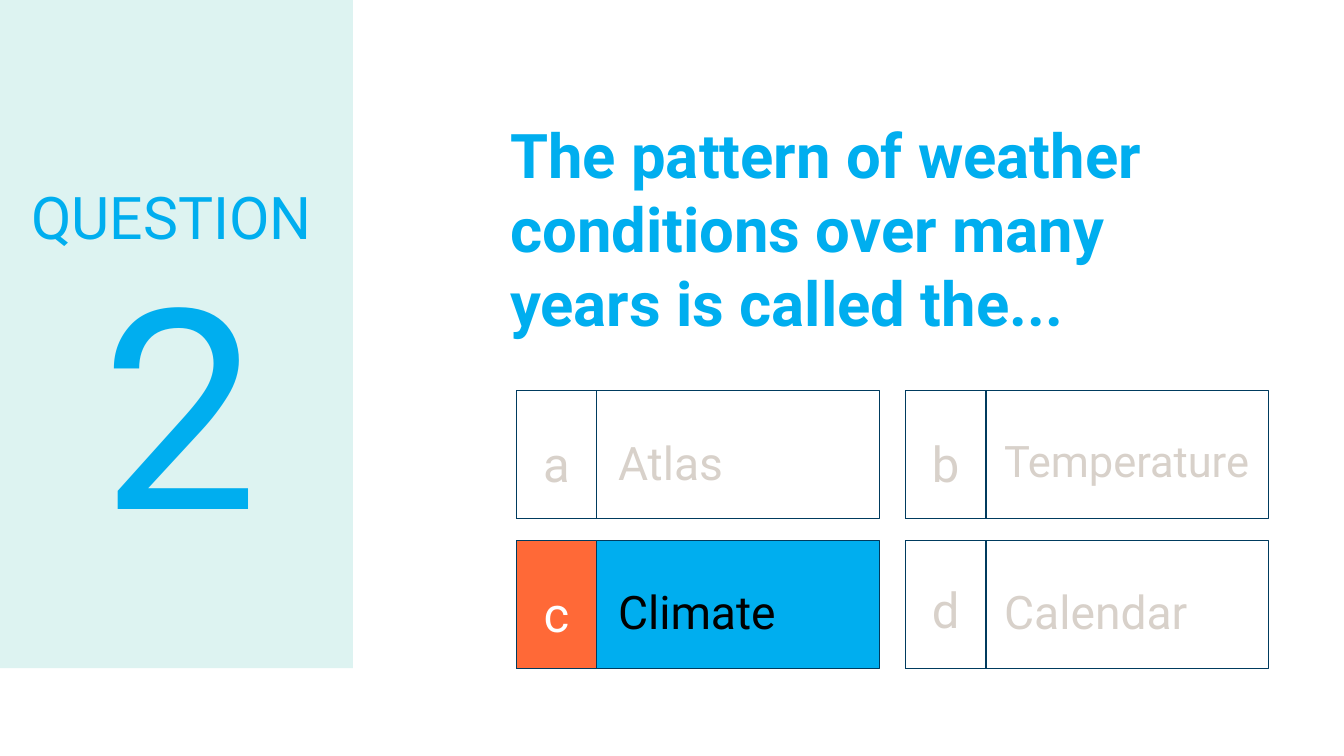
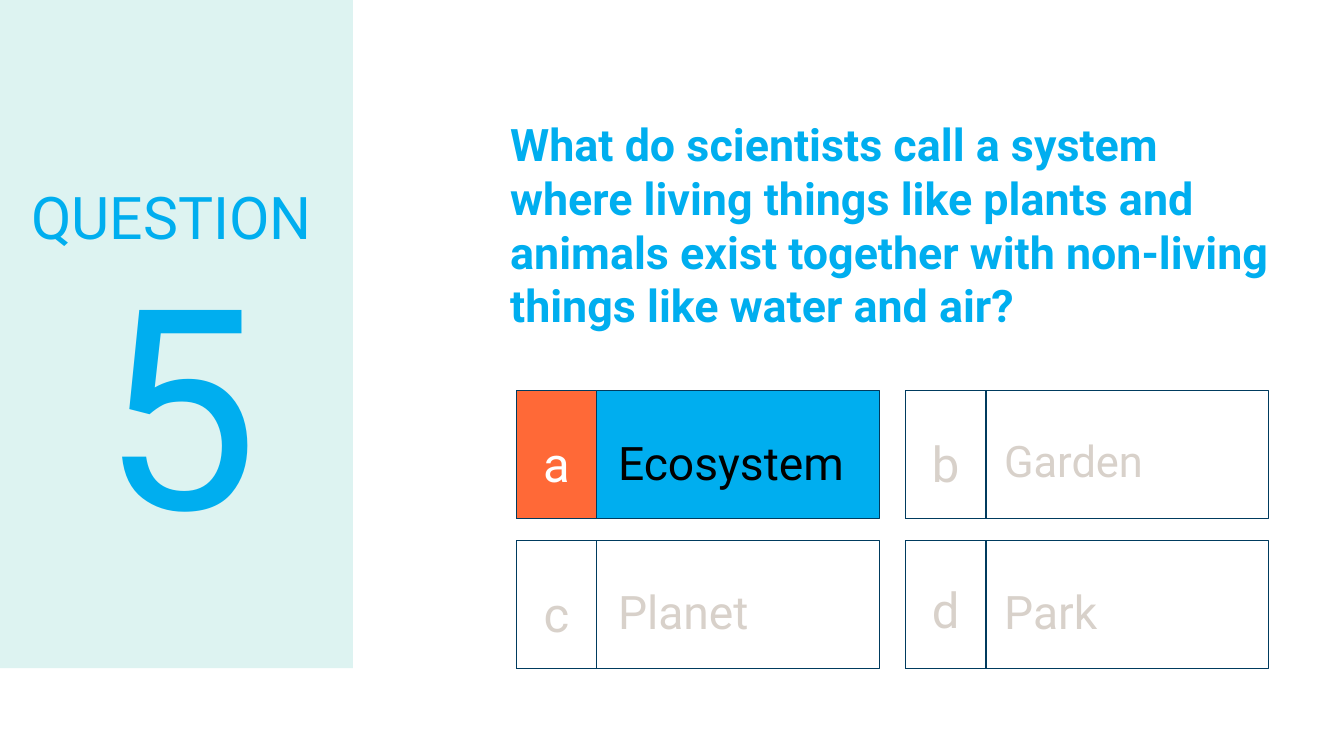
from pptx import Presentation
from pptx.dml.color import RGBColor
from pptx.enum.shapes import MSO_SHAPE
from pptx.enum.text import MSO_ANCHOR, PP_ALIGN
from pptx.util import Inches, Pt

# Shared style
FONT = "Roboto"
BLUE = RGBColor(0x00, 0xAE, 0xEF)
NAVY = RGBColor(0x00, 0x3B, 0x5E)
ORANGE = RGBColor(0xFF, 0x69, 0x37)
MINT = RGBColor(0xDD, 0xF3, 0xF1)
GREY = RGBColor(0xD8, 0xD1, 0xCA)
BLACK = RGBColor(0x00, 0x00, 0x00)
WHITE = RGBColor(0xFF, 0xFF, 0xFF)

# Answer grid: cell size, and the step from one cell to the next
CELL_WIDTH, CELL_HEIGHT, KEY_WIDTH = 3.6, 1.27, 0.8
COLUMN_STEP, ROW_STEP = 3.86, 1.49

# For each letter: text indent, answer size, drop of the letter, drop of the answer
OPTION_STYLES = {
    "a": (1.01, 33, 0.34, 0.36),
    "b": (0.98, 31, 0.34, 0.36),
    "c": (1.01, 33, 0.34, 0.34),
    "d": (0.98, 33, 0.30, 0.34),
}

# Question number, text, text size, text width, answers, correct letter
QUESTIONS = [
    ("2", "The pattern of weather conditions over many years is called the...",
     44, 7.6, ["Atlas", "Temperature", "Climate", "Calendar"], "c"),
    ("5", "What do scientists call a system where living things like plants and "
     "animals exist together with non-living things like water and air?",
     32, 7.82, ["Ecosystem", "Garden", "Planet", "Park"], "a"),
]


def write(shape, text, size, color, insets, bold=False, align=PP_ALIGN.LEFT,
          anchor=MSO_ANCHOR.TOP, spacing=1.0):
    """Put one styled paragraph in a shape; insets are left, top, right, bottom."""
    frame = shape.text_frame
    frame.word_wrap = True
    frame.vertical_anchor = anchor
    (frame.margin_left, frame.margin_top,
     frame.margin_right, frame.margin_bottom) = map(Inches, insets)
    para = frame.paragraphs[0]
    para.alignment = align
    para.line_spacing = spacing
    span = para.add_run()
    span.text = text
    span.font.name = FONT
    span.font.size = Pt(size)
    span.font.bold = bold
    span.font.color.rgb = color


def add_text(page, box, *args, **style):
    write(page.shapes.add_textbox(*map(Inches, box)), *args, **style)


def add_rectangle(page, box, fill=None, line=None):
    shape = page.shapes.add_shape(MSO_SHAPE.RECTANGLE, *map(Inches, box))
    shape.shadow.inherit = False
    if fill is None:
        shape.fill.background()
    else:
        shape.fill.solid()
        shape.fill.fore_color.rgb = fill
    if line is None:
        shape.line.fill.background()
    else:
        shape.line.color.rgb = line
        shape.line.width = Pt(0.75)
    return shape


def add_number_panel(page, box, number):
    """Tinted side panel with the word QUESTION above a large number."""
    left, top, _, _ = box
    add_rectangle(page, box, MINT)
    style = dict(insets=[0.05] * 4, anchor=MSO_ANCHOR.MIDDLE, spacing=0.9)
    add_text(page, (left + 0.26, top + 1.68, 3.34, 1.01), "QUESTION", 42, BLUE, **style)
    add_text(page, (left + 0.26, top + 2.59, 3.05, 3.12), number, 200, BLUE,
             align=PP_ALIGN.CENTER, **style)


def add_option(page, left, top, letter, answer, correct):
    """One answer: a wide cell with a letter key over its left end."""
    indent, size, letter_drop, answer_drop = OPTION_STYLES[letter]
    cell = add_rectangle(page, (left, top, CELL_WIDTH, CELL_HEIGHT),
                         BLUE if correct else None, NAVY)
    write(cell, answer, size, BLACK if correct else GREY,
          (indent, answer_drop, 0, 0), spacing=1.15)
    key = add_rectangle(page, (left, top, KEY_WIDTH, CELL_HEIGHT),
                        ORANGE if correct else None, NAVY)
    write(key, letter, 35, WHITE if correct else GREY,
          (0.1, letter_drop, 0.1, 0), align=PP_ALIGN.CENTER, spacing=1.15)


def add_options(page, left, top, answers, correct_letter):
    for index, (letter, answer) in enumerate(zip(OPTION_STYLES, answers)):
        row, column = divmod(index, 2)
        add_option(page, left + column * COLUMN_STEP, top + row * ROW_STEP,
                   letter, answer, letter == correct_letter)


def add_question_page(deck, number, question, size, width, answers, correct_letter):
    page = deck.slides.add_slide(deck.slide_layouts[6])
    add_text(page, (4.98, 1.08, width, 2.37), question, size, BLUE, [0.08] * 4, bold=True)
    add_options(page, 5.12, 3.87, answers, correct_letter)
    add_number_panel(page, (0, 0, 3.5, 6.63), number)


def main():
    deck = Presentation()
    deck.slide_width, deck.slide_height = Inches(13.33), Inches(7.5)
    for question in QUESTIONS:
        add_question_page(deck, *question)
    deck.save("out.pptx")


if __name__ == "__main__":
    main()
